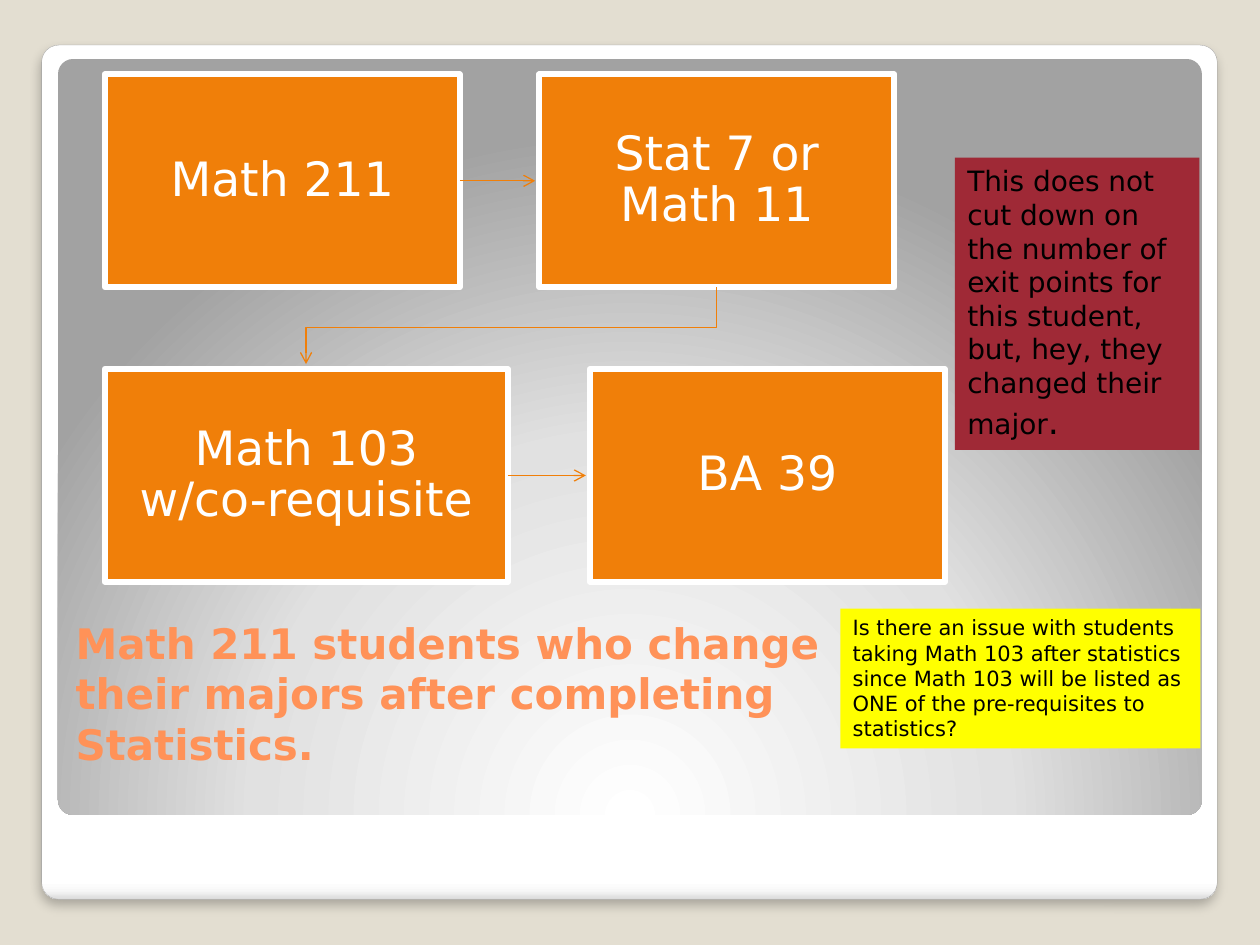
from pptx import Presentation
from pptx.dml.color import RGBColor
from pptx.enum.shapes import MSO_CONNECTOR, MSO_SHAPE
from pptx.enum.text import MSO_ANCHOR, PP_ALIGN
from pptx.oxml import parse_xml
from pptx.oxml.ns import nsdecls, qn
from pptx.util import Cm, Pt

FONT = "DejaVu Sans"
COLORS = {
    "background": "E3DED1", "frame_line": "A4A4A4", "course": "F07F09",
    "white": "FFFFFF", "black": "000000", "title": "FF9258",
    "remark": "9F2936", "question": "FFFF00",
}


def rgb(name):
    return RGBColor.from_string(COLORS[name])


def style_text(frame, size, color, bold=False):
    frame.word_wrap = True
    for paragraph in frame.paragraphs:
        for run in paragraph.runs:
            run.font.name = FONT
            run.font.size = Pt(size)
            run.font.bold = bold
            run.font.color.rgb = rgb(color)


prs = Presentation()
prs.slide_width, prs.slide_height = Cm(25.4), Cm(19.05)
slide = prs.slides.add_slide(prs.slide_layouts[5])
shapes = slide.shapes
slide.background.fill.solid()
slide.background.fill.fore_color.rgb = rgb("background")

# Outer frame and inner panel: box, gradient stops, gradient direction
panels = [
    ((0.84, 0.91, 23.7, 17.22),
     [(0, "FFFFFF"), (98, "FFFFFF"), (99, "F7F7F7"), (100, "DADADA")],
     '<a:lin ang="5400000" scaled="0"/>'),
    ((1.17, 1.19, 23.06, 15.24),
     [(0, "FFFFFF"), (55, "E1E1E1"), (100, "A2A2A2")],
     '<a:path path="circle"><a:fillToRect l="50000" t="175000" r="50000" b="-75000"/></a:path>'),
]
backdrop = []
for box, stops, direction in panels:
    panel = shapes.add_shape(MSO_SHAPE.ROUNDED_RECTANGLE, *map(Cm, box))
    panel.adjustments[0] = 0.02
    panel.shadow.inherit = False
    panel.line.fill.background()
    panel.fill.gradient()
    stop_xml = "".join(
        f'<a:gs pos="{position * 1000}"><a:srgbClr val="{color}"/></a:gs>'
        for position, color in stops)
    properties = panel.element.spPr
    properties.replace(
        properties.find(qn("a:gradFill")),
        parse_xml(f'<a:gradFill {nsdecls("a")} rotWithShape="1">'
                  f'<a:gsLst>{stop_xml}</a:gsLst>{direction}</a:gradFill>'))
    backdrop.append(panel)

frame = backdrop[0]
frame.line.color.rgb = rgb("frame_line")
frame.line.width = Pt(0.16)
frame.element.spPr.find(qn("a:effectLst")).append(parse_xml(
    f'<a:outerShdw {nsdecls("a")} blurRad="76200" dist="50800" dir="5400000" '
    'algn="tl" rotWithShape="0"><a:srgbClr val="000000">'
    '<a:alpha val="25000"/></a:srgbClr></a:outerShdw>'))

title = shapes.title
title.left, title.top, title.width, title.height = map(Cm, (1.27, 12.7, 15.54, 2.92))
title.text_frame.text = "Math 211 students who change their majors after completing Statistics."
title.text_frame.vertical_anchor = MSO_ANCHOR.BOTTOM
title.text_frame.paragraphs[0].alignment = PP_ALIGN.LEFT
style_text(title.text_frame, 24, "title", bold=True)
shapes.element.append(title.element)  # in front of the panels

# Course sequence: each row runs left to right
COURSE_H, COURSE_W, ARROW_GAP = 4.29, 7.16, 0.08
course_rows = [
    (1.5, [("Math 211", 2.11, COURSE_W), ("Stat 7 or Math 11", 10.87, COURSE_W)]),
    (7.44, [("Math 103 w/co-requisite", 2.11, 8.13), ("BA 39", 11.89, COURSE_W)]),
]
arrows = []
for top, courses in course_rows:
    for name, left, width in courses:
        course = shapes.add_shape(MSO_SHAPE.RECTANGLE, Cm(left), Cm(top), Cm(width), Cm(COURSE_H))
        course.shadow.inherit = False
        course.fill.solid()
        course.fill.fore_color.rgb = rgb("course")
        course.line.color.rgb = rgb("white")
        course.line.width = Pt(3.35)
        label = course.text_frame
        label.text = name
        label.vertical_anchor = MSO_ANCHOR.MIDDLE
        label.margin_left = label.margin_right = Cm(0.53)
        label.margin_top = label.margin_bottom = Cm(0.53)
        label.paragraphs[0].alignment = PP_ALIGN.CENTER
        label.paragraphs[0].line_spacing = 0.9
        style_text(label, 27, "white")
    (_, left, width), (_, next_left, _) = courses
    middle = Cm(top + COURSE_H / 2)
    arrow = shapes.add_connector(
        MSO_CONNECTOR.STRAIGHT, Cm(left + width), middle, Cm(next_left - ARROW_GAP), middle)
    arrow.element.spPr.append(parse_xml(f'<a:effectLst {nsdecls("a")}/>'))
    arrows.append(arrow)

# Elbow from the end of the first row to the start of the second
upper_x, upper_y, bend_y, lower_x, lower_y = map(Cm, (14.45, 5.79, 6.6, 6.17, 7.34))
elbow = shapes.build_freeform(upper_x, upper_y)
elbow.add_line_segments(
    [(upper_x, bend_y), (lower_x, bend_y), (lower_x, lower_y)], close=False)
row_change = elbow.convert_to_shape()
row_change.shadow.inherit = False
row_change.fill.background()
arrows.append(row_change)

for arrow in arrows:
    arrow.line.color.rgb = rgb("course")
    arrow.line.width = Pt(0.75)
    arrow.line._get_or_add_ln().append(
        parse_xml(f'<a:tailEnd {nsdecls("a")} type="arrow"/>'))

notes = [
    ("remark", 16, (19.25, 3.18, 4.93, 5.89),
     "This does not cut down on the number of exit points for this student, "
     "but, hey, they changed their major"),
    ("question", 12, (16.94, 12.27, 7.26, 2.82),
     "Is there an issue with students taking Math 103 after statistics since "
     "Math 103 will be listed as ONE of the pre-requisites to statistics?"),
]
for kind, size, box, wording in notes:
    note = shapes.add_textbox(*map(Cm, box))
    note.fill.solid()
    note.fill.fore_color.rgb = rgb(kind)
    note.text_frame.text = wording
    if kind == "remark":
        note.text_frame.paragraphs[0].add_run().text = "."
    style_text(note.text_frame, size, "black")
    if kind == "remark":
        note.text_frame.paragraphs[0].runs[-1].font.size = Pt(20)

prs.save("out.pptx")
